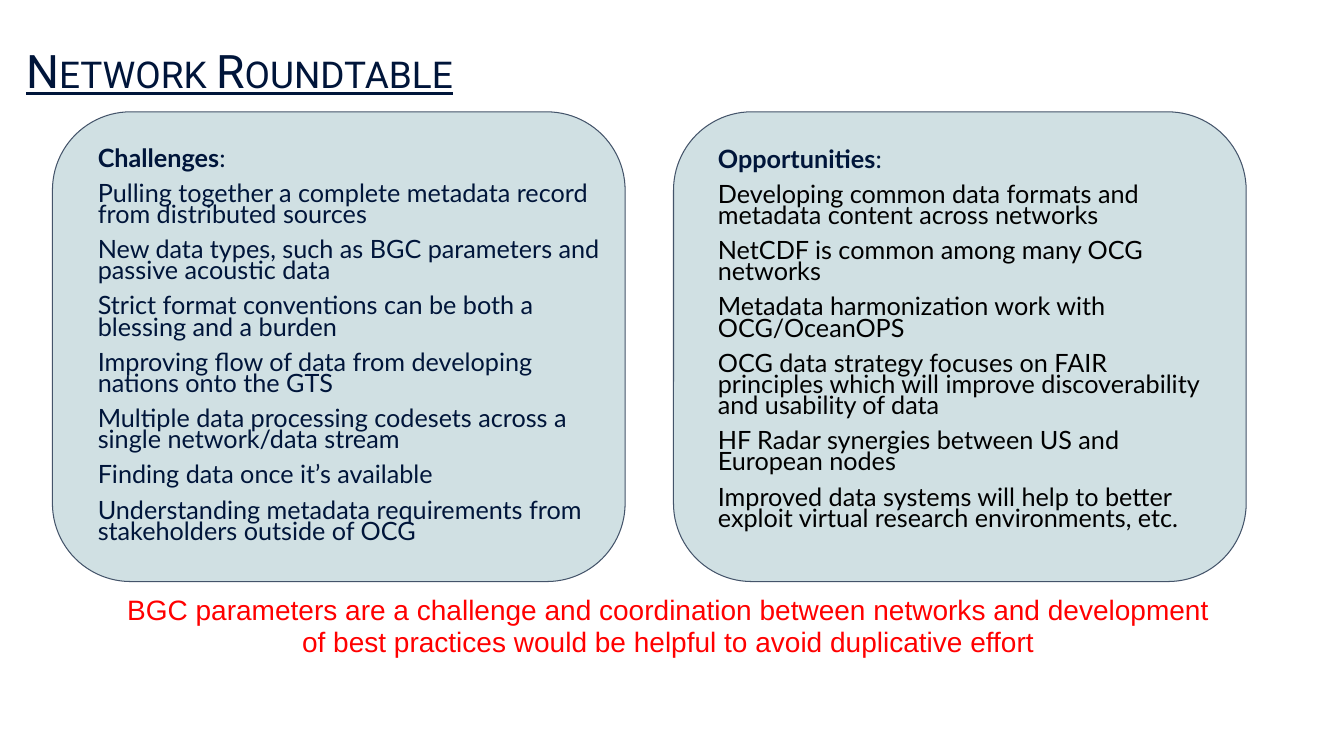
from dataclasses import dataclass
from typing import Any

from lxml import etree
from pptx import Presentation, util as u
from pptx.dml.color import RGBColor
from pptx.enum import shapes, text
from pptx.oxml import ns

NAVY = RGBColor(0x00, 0x15, 0x3A)
BLACK = RGBColor(0x00, 0x00, 0x00)
RED = RGBColor(0xFF, 0x00, 0x00)
PANEL_FILL = RGBColor(0xD0, 0xE0, 0xE3)
PANEL_EDGE = RGBColor(0x44, 0x54, 0x6A)

Box = tuple[float, float, float, float]


@dataclass
class Topic:
    heading: str
    points: list[str]
    color: RGBColor
    panel_left: float
    box: Box
    inset: float


TOPICS = [
    Topic("Challenges", [
        "Pulling together a complete metadata record from distributed sources",
        "New data types, such as BGC parameters and passive acoustic data",
        "Strict format conventions can be both a blessing and a burden",
        "Improving flow of data from developing nations onto the GTS",
        "Multiple data processing codesets across a single network/data stream",
        "Finding data once it’s available",
        "Understanding metadata requirements from stakeholders outside of OCG",
    ], NAVY, 0.52, (0.87, 1.44, 5.32, 4.32), 0.05),
    Topic("Opportunities", [
        "Developing common data formats and metadata content across networks",
        "NetCDF is common among many OCG networks",
        "Metadata harmonization work with OCG/OceanOPS",
        "OCG data strategy focuses on FAIR principles which will improve "
        "discoverability and usability of data",
        "HF Radar synergies between US and European nodes",
        "Improved data systems will help to better exploit virtual research "
        "environments, etc.",
    ], BLACK, 6.68, (7.02, 1.4, 5.03, 3.94), 0.1),
]


def apply(target: Any, values: dict[str, Any]) -> None:
    for name, value in values.items():
        setattr(target, name, value)


def place(shape: Any, box: Box) -> None:
    apply(shape, dict(zip(("left", "top", "width", "height"), map(u.Inches, box))))


def set_frame(frame: Any, inset: float, anchor: Any) -> None:
    apply(frame, {
        "word_wrap": True, "auto_size": text.MSO_AUTO_SIZE.NONE,
        "vertical_anchor": anchor,
        "margin_left": u.Inches(0.1), "margin_right": u.Inches(0.1),
        "margin_top": u.Inches(inset), "margin_bottom": u.Inches(inset),
    })


def add_run(paragraph: Any, words: str, font: str, size: float, color: RGBColor,
            **style: Any) -> Any:
    run = paragraph.add_run()
    run.text = words
    apply(run.font, {"name": font, "size": u.Pt(size), **style})
    run.font.color.rgb = color
    return run


def add_panel(slide: Any, topic: Topic) -> None:
    panel = slide.shapes.add_shape(
        shapes.MSO_SHAPE.ROUNDED_RECTANGLE,
        *map(u.Inches, (topic.panel_left, 1.11, 5.68, 4.66)))
    panel.shadow.inherit = False
    panel.fill.solid()
    panel.fill.fore_color.rgb = PANEL_FILL
    panel.line.color.rgb = PANEL_EDGE
    panel.line.width = u.Pt(0.75)
    slide.shapes.title.element.addprevious(panel.element)


def add_list_paragraph(frame: Any, first: bool) -> Any:
    paragraph = frame.paragraphs[0] if first else frame.add_paragraph()
    apply(paragraph, {"line_spacing": 0.7, "space_before": u.Pt(0 if first else 10)})
    properties = paragraph._p.get_or_add_pPr()
    for name in ("marL", "indent"):
        properties.set(name, "0")
    etree.SubElement(properties, ns.qn("a:buNone"))
    return paragraph


def fill_list(placeholder: Any, topic: Topic) -> None:
    place(placeholder, topic.box)
    frame = placeholder.text_frame
    set_frame(frame, topic.inset, text.MSO_ANCHOR.TOP)
    heading = add_list_paragraph(frame, True)
    add_run(heading, topic.heading, "Lato", 18, NAVY, bold=True)
    add_run(heading, ":", "Lato", 18, NAVY, bold=False)
    for point in topic.points:
        add_run(add_list_paragraph(frame, False), point, "Lato", 18, topic.color)


def fill_title(title: Any) -> None:
    place(title, (0.16, 0, 11.5, 1.45))
    set_frame(title.text_frame, 0.05, text.MSO_ANCHOR.MIDDLE)
    paragraph = title.text_frame.paragraphs[0]
    apply(paragraph, {"alignment": text.PP_ALIGN.LEFT, "line_spacing": 0.9})
    run = add_run(paragraph, "Network Roundtable", "Roboto", 33, NAVY, underline=True)
    run.font._element.set("cap", "small")


def add_conclusion(slide: Any) -> None:
    conclusion = slide.shapes.add_textbox(*map(u.Inches, (1.01, 5.8, 11.24, 0.84)))
    set_frame(conclusion.text_frame, 0.1, text.MSO_ANCHOR.TOP)
    conclusion.text_frame.auto_size = text.MSO_AUTO_SIZE.SHAPE_TO_FIT_TEXT
    paragraph = conclusion.text_frame.paragraphs[0]
    apply(paragraph, {"alignment": text.PP_ALIGN.CENTER, "line_spacing": 0.95})
    add_run(paragraph,
            "BGC parameters are a challenge and coordination between networks and "
            "development of best practices would be helpful to avoid duplicative effort",
            "Arial", 20, RED)


def main() -> None:
    deck = Presentation()
    apply(deck, {"slide_width": u.Inches(13.33), "slide_height": u.Inches(7.5)})
    slide = deck.slides.add_slide(deck.slide_layouts.get_by_name("Two Content"))
    fill_title(slide.shapes.title)
    for index, topic in enumerate(TOPICS, start=1):
        add_panel(slide, topic)
        fill_list(slide.placeholders[index], topic)
    add_conclusion(slide)
    deck.save("out.pptx")


if __name__ == "__main__":
    main()
